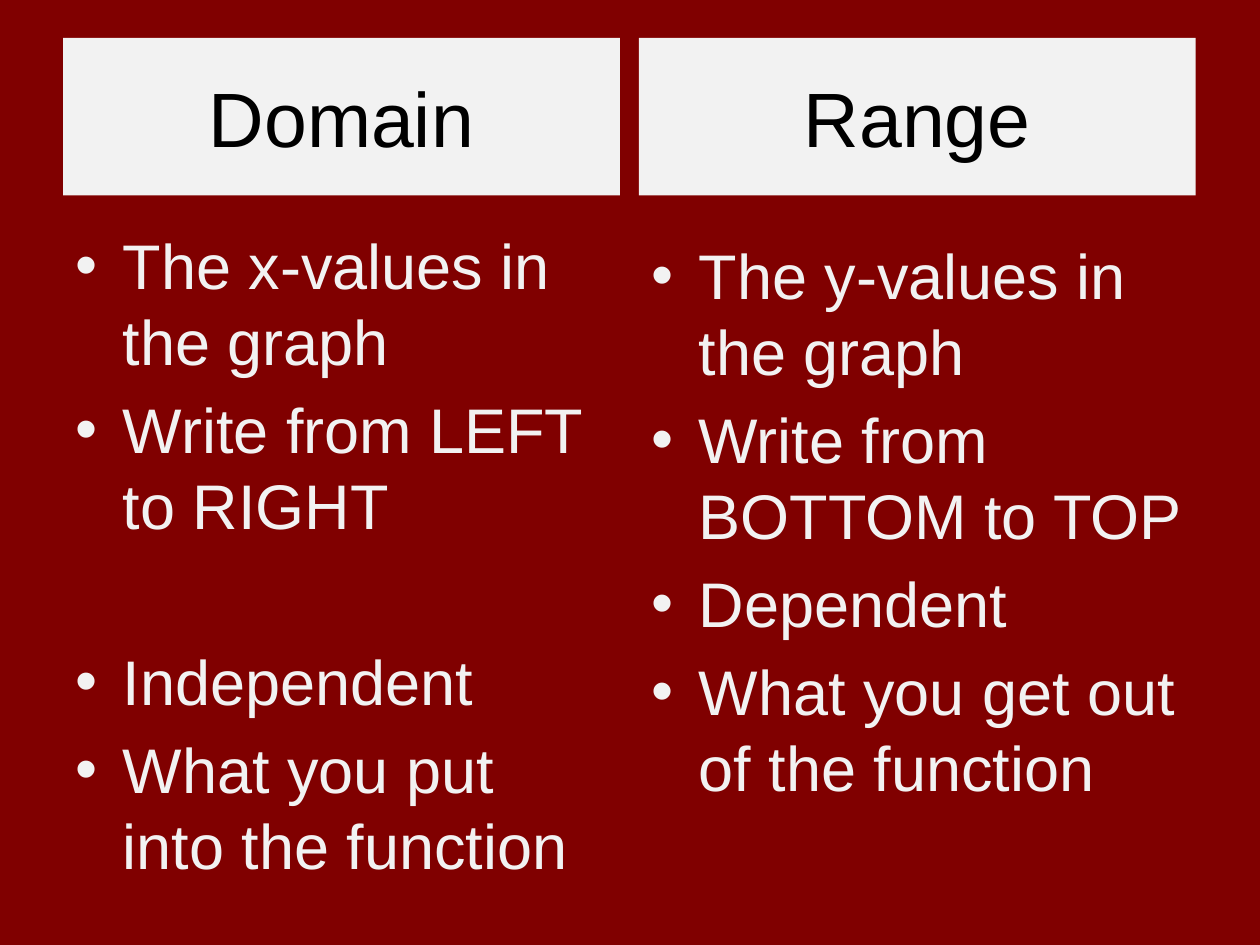
from dataclasses import dataclass

from pptx import Presentation
from pptx import util as u
from pptx.dml.color import RGBColor
from pptx.enum import shapes, text


@dataclass(frozen=True)
class Theme:
    background: RGBColor = RGBColor(0x80, 0x00, 0x00)
    light: RGBColor = RGBColor(0xF2, 0xF2, 0xF2)
    dark: RGBColor = RGBColor(0x00, 0x00, 0x00)
    font: str = "Arial"
    heading_size: int = 44
    body_size: int = 36
    bullet_gap: float = 7.2
    group_gap: float = 57.5


class ComparisonSlide:
    """Builds a two-column comparison slide in one theme."""

    def __init__(self, presentation, theme):
        self.theme = theme
        self.slide = presentation.slides.add_slide(presentation.slide_layouts[3])
        fill = self.slide.background.fill
        fill.solid()
        fill.fore_color.rgb = theme.background

    def place(self, shape, left, top, width, height):
        shape.left, shape.top = u.Inches(left), u.Inches(top)
        shape.width, shape.height = u.Inches(width), u.Inches(height)

    def style(self, paragraph, size, color):
        paragraph.font.name = self.theme.font
        paragraph.font.size = u.Pt(size)
        paragraph.font.color.rgb = color

    def heading(self, shape, words, left, top, width, height):
        self.place(shape, left, top, width, height)
        shape.fill.solid()
        shape.fill.fore_color.rgb = self.theme.light
        shape.line.fill.background()
        frame = shape.text_frame
        frame.text = words
        frame.word_wrap = True
        frame.auto_size = text.MSO_AUTO_SIZE.NONE
        frame.vertical_anchor = text.MSO_ANCHOR.MIDDLE
        paragraph = frame.paragraphs[0]
        paragraph.alignment = text.PP_ALIGN.CENTER
        self.style(paragraph, self.theme.heading_size, self.theme.dark)

    def title(self, words, *box):
        self.heading(self.slide.shapes.title, words, *box)

    def title_block(self, words, *box):
        shape = self.slide.shapes.add_shape(shapes.MSO_SHAPE.RECTANGLE, *[u.Inches(n) for n in box])
        shape.shadow.inherit = False
        self.heading(shape, words, *box)

    def bullets(self, index, groups, left, top, width, height):
        shape = self.slide.placeholders[index]
        self.place(shape, left, top, width, height)
        frame = shape.text_frame
        frame.text = "\n".join(item for group in groups for item in group)
        frame.auto_size = text.MSO_AUTO_SIZE.NONE
        paragraphs = iter(frame.paragraphs)
        for number, group in enumerate(groups):
            for position, _ in enumerate(group):
                paragraph = next(paragraphs)
                opens_group = number > 0 and position == 0
                gap = self.theme.group_gap if opens_group else self.theme.bullet_gap
                paragraph.space_before = u.Pt(gap)
                self.style(paragraph, self.theme.body_size, self.theme.light)


def main():
    presentation = Presentation()
    presentation.slide_width, presentation.slide_height = u.Inches(10), u.Inches(7.5)
    slide = ComparisonSlide(presentation, Theme())

    domain_left, range_left, width = 0.5, 5.07, 4.42
    heading_top, heading_height, list_height = 0.3, 1.25, 4.95

    slide.title("Domain", domain_left, heading_top, width, heading_height)
    slide.bullets(1, [
        ["The x-values in the graph", "Write from LEFT to RIGHT"],
        ["Independent", "What you put into the function"],
    ], domain_left, 1.75, width, list_height)

    slide.title_block("Range", range_left, heading_top, width, heading_height)
    slide.bullets(2, [
        ["The y-values in the graph", "Write from BOTTOM to TOP",
         "Dependent", "What you get out of the function"],
    ], range_left, 1.83, width, list_height)

    presentation.save("out.pptx")


if __name__ == "__main__":
    main()
